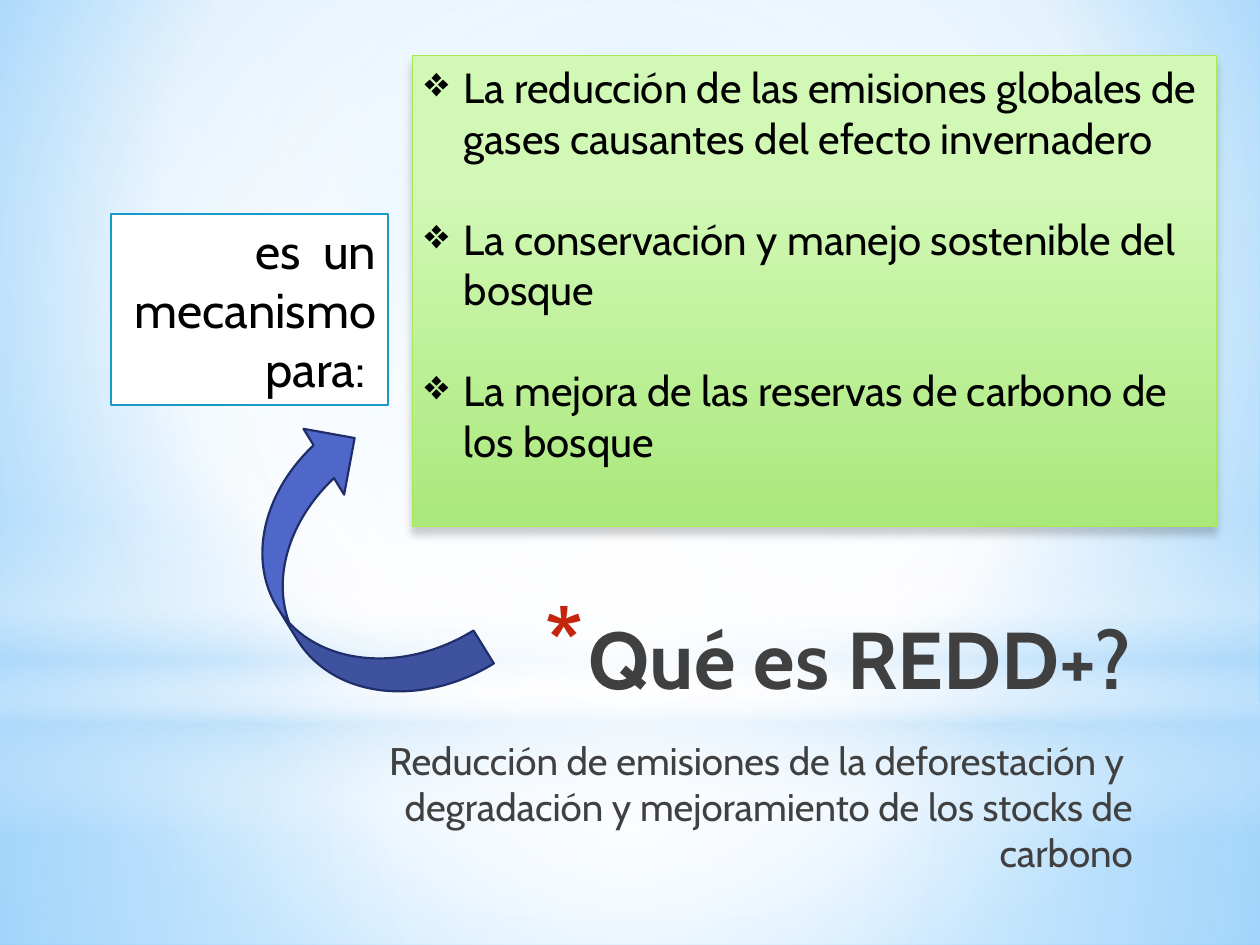
"""Build a slide that explains what the REDD+ mechanism is for."""
from lxml import etree
from pptx import Presentation
from pptx import util as u
from pptx.dml.color import RGBColor
from pptx.enum import shapes, text
from pptx.oxml import ns

BLACK = RGBColor(0x00, 0x00, 0x00)
WHITE = RGBColor(0xFF, 0xFF, 0xFF)
GREY = RGBColor(0x40, 0x40, 0x40)
RED = RGBColor(0xC3, 0x26, 0x0C)
SKY = RGBColor(0x9E, 0xD5, 0xFF)
AZURE = RGBColor(0x5B, 0xB9, 0xFF)
MIST = RGBColor(0xB4, 0xDC, 0xFA)
TEAL = RGBColor(0x19, 0x99, 0xC6)
INDIGO = RGBColor(0x4E, 0x67, 0xC8)
NAVY = RGBColor(0x1F, 0x2E, 0x69)
LIME = RGBColor(0xA7, 0xEA, 0x52)
PALE_GREEN = RGBColor(0xD1, 0xF8, 0xB5)
GREEN = RGBColor(0xAA, 0xE8, 0x7B)
CENTRE = (50, 50, 50, 50)
RECT = shapes.MSO_SHAPE.RECTANGLE
RIGHT = text.PP_ALIGN.RIGHT


def node(parent, tag, **values):
    """Append a DrawingML element with the given attributes."""
    return etree.SubElement(parent, ns.qn(f"a:{tag}"),
                            {name: str(value) for name, value in values.items()})


def assign(target, values):
    """Set every attribute named in the dict."""
    for name, value in values.items():
        setattr(target, name, value)


def gradient(fill, parent, stops, focus=None):
    """Fill with (position, colour, opacity) stops, radial if a focus is given."""
    fill.solid()
    solid = parent.find(ns.qn("a:solidFill"))
    grad = etree.Element(ns.qn("a:gradFill"), rotWithShape="1")
    stop_list = node(grad, "gsLst")
    for position, colour, opacity in stops:
        stop = node(stop_list, "gs", pos=position * 1000)
        node(node(stop, "srgbClr", val=colour), "alpha", val=opacity * 1000)
    if focus:
        sides = {side: share * 1000 for side, share in zip("ltrb", focus)}
        node(node(grad, "path", path="circle"), "fillToRect", **sides)
    else:
        node(grad, "lin", ang=90 * 60000, scaled=0)
    parent.replace(solid, grad)


class SlideBuilder:
    """Holds the text style and the current slide."""

    def __init__(self, page, font="Cabin"):
        self.page = page
        self.font = font

    def background(self, stops, focus):
        """Paint the slide background."""
        fill = self.page.background.fill
        fill.solid()
        parent = self.page.element.find(".//" + ns.qn("p:bgPr"))
        gradient(fill, parent, stops, focus)

    def place(self, box, frame):
        """Set the left, top, width and height in centimetres."""
        names = ("left", "top", "width", "height")
        assign(box, {name: u.Cm(value) for name, value in zip(names, frame)})

    def shape(self, kind, frame, fill=None, stops=(), focus=None, line=None, width=1.25):
        """Add a preset shape with a solid or gradient fill."""
        box = self.page.shapes.add_shape(kind, 0, 0, 0, 0)
        self.place(box, frame)
        box.shadow.inherit = False
        if stops:
            gradient(box.fill, box.element.spPr, stops, focus)
        else:
            box.fill.solid()
            box.fill.fore_color.rgb = fill
        if line is None:
            box.line.fill.background()
        else:
            box.line.color.rgb = line
            box.line.width = u.Pt(width)
        return box

    def drop_shadow(self, box):
        """Cast a soft shadow straight down."""
        effects = box.element.spPr.find(ns.qn("a:effectLst"))
        shadow = node(effects, "outerShdw", blurRad=u.Pt(5), dist=u.Pt(4),
                      dir=90 * 60000, algn="ctr", rotWithShape=0)
        node(node(shadow, "srgbClr", val=BLACK), "alpha", val=20000)

    def placeholder(self, box, frame):
        """Move a placeholder into position, in front of the bands."""
        self.place(box, frame)
        self.page.shapes.element.append(box.element)
        return box

    def add_text(self, box, lines, size, colour, bold=False, spacing=None):
        """Set one paragraph per line from the top of the box."""
        frame = box.text_frame
        assign(frame, {"word_wrap": True, "auto_size": text.MSO_AUTO_SIZE.NONE,
                       "vertical_anchor": text.MSO_ANCHOR.TOP})
        frame.text = "\n".join(lines)
        for para in frame.paragraphs:
            assign(para, {"alignment": text.PP_ALIGN.LEFT, **(spacing or {})})
            for span in para.runs:
                assign(span.font, {"name": self.font, "size": u.Pt(size), "bold": bold})
                span.font.color.rgb = colour
        return frame.paragraphs

    def bullet(self, para, mark=None, hang=0, indent=0, colour=None, percent=100):
        """Give a paragraph a hanging bullet, or none."""
        props = para._p.get_or_add_pPr()
        props.set("marL", str(u.Cm(indent or hang)))
        props.set("indent", str(-u.Cm(hang)))
        if mark is None:
            node(props, "buNone")
            return
        if colour is not None:
            node(node(props, "buClr"), "srgbClr", val=colour)
        node(props, "buSzPct", val=percent * 1000)
        node(props, "buChar", char=mark)


def main():
    """Compose the slide and save it."""
    deck = Presentation()
    assign(deck, {"slide_width": u.Cm(25.4), "slide_height": u.Cm(19.05)})
    page = deck.slides.add_slide(deck.slide_layouts[1])
    builder = SlideBuilder(page)

    builder.background([(0, SKY, 100), (60, WHITE, 100), (100, AZURE, 100)], (20, 10, 20, 60))
    bands = [
        (RECT, 14.17, 4.88, [(0, WHITE, 91), (37, WHITE, 76), (100, MIST, 79)], CENTRE),
        (RECT, 0, 14.17, [(0, WHITE, 89), (48, WHITE, 62), (100, MIST, 79)], CENTRE),
        (RECT, 10.46, 6.35, [(0, WHITE, 0), (29, WHITE, 30), (45, MIST, 40),
                             (55, WHITE, 26), (65, MIST, 60), (100, WHITE, 0)], None),
        (shapes.MSO_SHAPE.OVAL, 4.45, 14.17, [(0, WHITE, 100), (56, WHITE, 0)], CENTRE),
    ]
    for kind, top, height, stops, focus in bands:
        builder.shape(kind, (0, top, 25.4, height), stops=stops, focus=focus)

    title = builder.placeholder(page.shapes.title, (4.98, 12.14, 18.08, 3.18))
    heading, = builder.add_text(title, ["Qué es REDD+?"], 46, GREY, True, {"alignment": RIGHT})
    builder.bullet(heading, "*", hang=0.89, colour=RED, percent=128)

    body = builder.placeholder(page.placeholders[1], (5.31, 14.73, 17.78, 3.3))
    summary, = builder.add_text(
        body, ["Reducción de emisiones de la deforestación y  "
               "degradación y mejoramiento de los stocks de carbono"], 22, GREY,
        spacing={"alignment": RIGHT, "space_before": u.Pt(4.4), "space_after": u.Pt(3)})
    builder.bullet(summary, indent=0.13)

    mechanism = builder.shape(RECT, (2.24, 4.32, 5.59, 3.84), WHITE, line=TEAL)
    builder.add_text(mechanism, ["es  un mecanismo para: "], 28, BLACK,
                     spacing={"alignment": RIGHT})

    arrow = builder.shape(shapes.MSO_SHAPE.CURVED_LEFT_ARROW, (5.46, 8.53, 3.12, 6.12),
                          INDIGO, line=NAVY)
    arrow.rotation = 148.3

    goals = builder.shape(RECT, (8.31, 1.12, 16.21, 9.5), line=LIME, width=0.75,
                          stops=[(28, PALE_GREEN, 100), (100, GREEN, 100)])
    builder.drop_shadow(goals)
    paras = builder.add_text(
        goals, ["La reducción de las emisiones globales de gases causantes del efecto invernadero",
                "La conservación y manejo sostenible del bosque",
                "La mejora de las reservas de carbono de los bosque"], 24, BLACK,
        spacing={"space_after": u.Pt(29)})
    for para in paras:
        builder.bullet(para, "❖", hang=0.79)

    deck.save("out.pptx")


if __name__ == "__main__":
    main()
